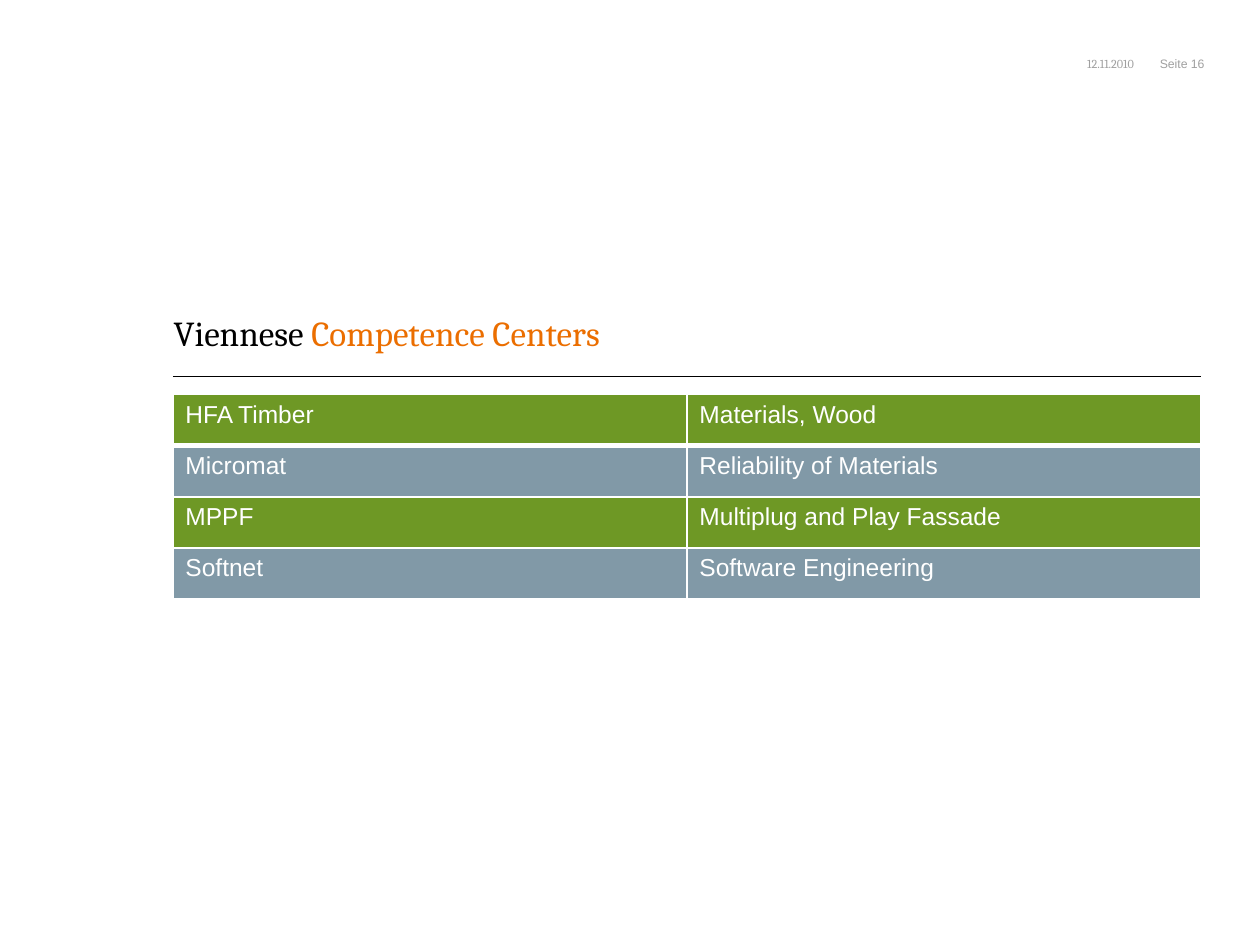
from dataclasses import dataclass

from lxml import etree
from pptx import Presentation
from pptx.dml.color import RGBColor
from pptx.enum.shapes import MSO_CONNECTOR
from pptx.enum.text import MSO_ANCHOR, PP_ALIGN
from pptx.oxml.ns import qn
from pptx.util import Pt

STRAIGHT = MSO_CONNECTOR.STRAIGHT
BOTTOM = MSO_ANCHOR.BOTTOM
LEFT, RIGHT = PP_ALIGN.LEFT, PP_ALIGN.RIGHT
TITLE_ONLY = 5


@dataclass(frozen=True)
class Theme:
    black: str = "000000"
    white: str = "FFFFFF"
    gray: str = "A0A0A0"
    orange: str = "EB6E00"
    green: str = "6E9825"
    slate: str = "8199A7"
    serif: str = "Cambria"
    sans: str = "Arial"
    title_size: float = 20
    table_size: float = 14
    header_size: float = 7


THEME = Theme()
CONTENT_LEFT, CONTENT_WIDTH = 98.8, 587.4
CENTERS = [
    ("HFA Timber", "Materials, Wood"),
    ("Micromat", "Reliability of Materials"),
    ("MPPF", "Multiplug and Play Fassade"),
    ("Softnet", "Software Engineering"),
]


def style_font(font, name, size, color):
    font.name = name
    font.size = Pt(size)
    font.color.rgb = RGBColor.from_string(color)


def clear_margins(frame):
    frame.margin_left = frame.margin_right = 0
    frame.margin_top = frame.margin_bottom = 0


def add_header_text(page, text, left, width, font_name):
    box = page.shapes.add_textbox(Pt(left), Pt(32.4), Pt(width), Pt(8.6))
    frame = box.text_frame
    clear_margins(frame)
    frame.word_wrap = False
    para = frame.paragraphs[0]
    para.text = text
    para.alignment = RIGHT
    style_font(para.font, font_name, THEME.header_size, THEME.gray)


def add_rule(page, top):
    right = CONTENT_LEFT + CONTENT_WIDTH
    rule = page.shapes.add_connector(
        STRAIGHT, Pt(CONTENT_LEFT), Pt(top), Pt(right), Pt(top))
    rule.line.color.rgb = RGBColor.from_string(THEME.black)
    rule.line.width = Pt(1)
    etree.SubElement(rule._element.spPr, qn("a:effectLst"))


def fill_title(page, spans):
    title = page.shapes.title
    title.left, title.top = Pt(99.2), Pt(150.5)
    title.width, title.height = Pt(587.4), Pt(51.8)
    frame = title.text_frame
    clear_margins(frame)
    frame.word_wrap = True
    frame.vertical_anchor = BOTTOM
    para = frame.paragraphs[0]
    para.alignment = LEFT
    para.line_spacing = Pt(24)
    style_font(para.font, THEME.serif, THEME.title_size, THEME.black)
    for text, color in spans:
        span = para.add_run()
        span.text = text
        span.font.color.rgb = RGBColor.from_string(color)


def set_borders(cell, top, bottom):
    """Draw white cell borders; side borders are one point wide."""
    properties = cell._tc.get_or_add_tcPr()
    widths = {"a:lnL": 1, "a:lnR": 1, "a:lnT": top, "a:lnB": bottom}
    for index, (tag, width) in enumerate(widths.items()):
        line = etree.Element(qn(tag), w=str(Pt(width)))
        fill = etree.SubElement(line, qn("a:solidFill"))
        etree.SubElement(fill, qn("a:srgbClr"), val=THEME.white)
        properties.insert(index, line)


def add_center_table(page, rows, top, row_height):
    table = page.shapes.add_table(
        len(rows), len(rows[0]), Pt(CONTENT_LEFT), Pt(top),
        Pt(CONTENT_WIDTH), Pt(row_height * len(rows))).table
    for row_index, texts in enumerate(rows):
        color = THEME.slate if row_index % 2 else THEME.green
        for column_index, text in enumerate(texts):
            cell = table.cell(row_index, column_index)
            cell.text = text
            cell.fill.solid()
            cell.fill.fore_color.rgb = RGBColor.from_string(color)
            style_font(cell.text_frame.paragraphs[0].font,
                       THEME.sans, THEME.table_size, THEME.white)
            set_borders(cell, top=3 if row_index == 1 else 1,
                        bottom=3 if row_index == 0 else 1)


def main():
    deck = Presentation()
    deck.slide_width, deck.slide_height = Pt(720), Pt(540)
    page = deck.slides.add_slide(deck.slide_layouts[TITLE_ONLY])
    add_header_text(page, "Seite 16", 655.9, 32.4, THEME.sans)
    add_rule(page, 215.2)
    fill_title(page, [("Viennese", THEME.black),
                      (" Competence Centers", THEME.orange)])
    add_header_text(page, "12.11.2010", 607.7, 40.3, THEME.serif)
    add_center_table(page, CENTERS, 225.5, 29.2)
    deck.save("out.pptx")


if __name__ == "__main__":
    main()
